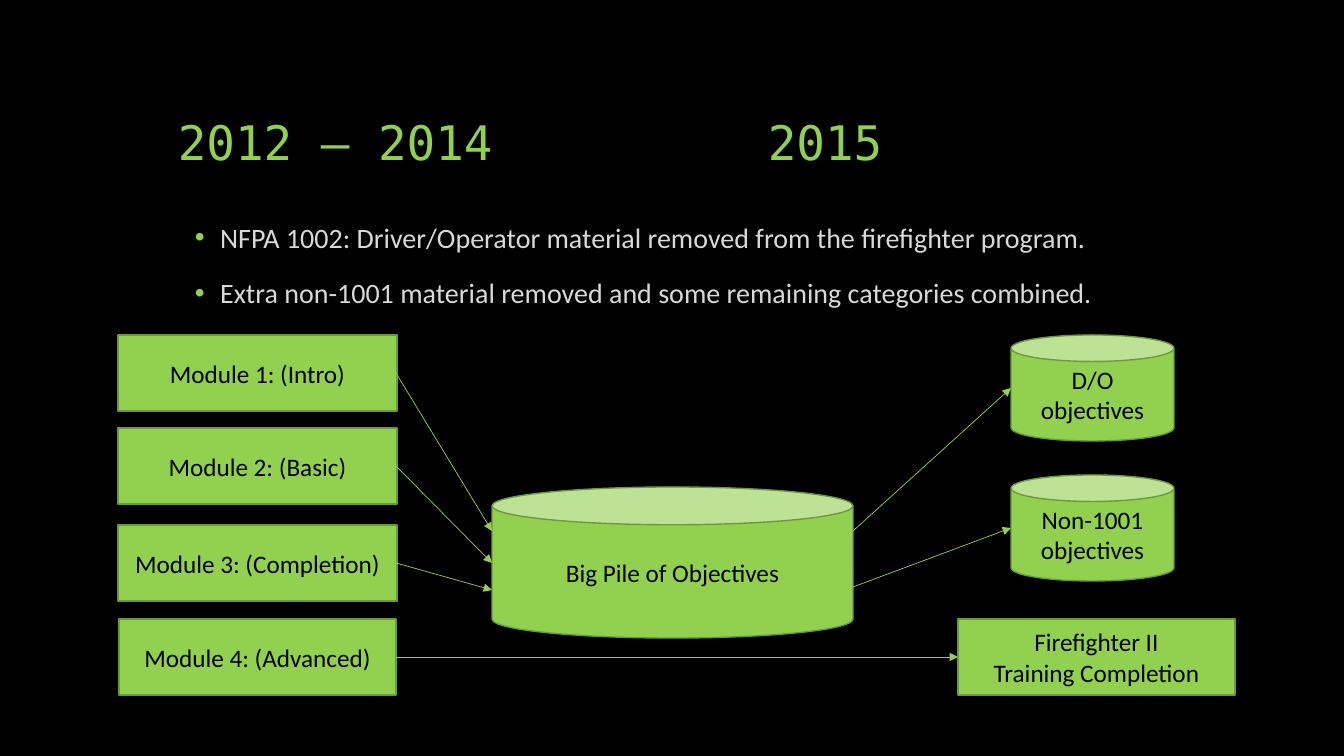
from lxml.etree import SubElement
from pptx import Presentation
from pptx.dml.color import RGBColor
from pptx.enum.shapes import MSO_CONNECTOR as CONNECTOR, MSO_SHAPE as SHAPE
from pptx.enum.text import MSO_ANCHOR as ANCHOR, PP_ALIGN as ALIGN
from pptx.oxml.ns import qn
from pptx.util import Pt

PX = 9071.43  # EMU per px, 100.8 px to the inch
COLORS = {"background": "000000", "green": "92D050", "outline": "6C9A3B",
          "label": "000000", "body": "D9D9D9"}


def emu(*lengths):
    return [round(length * PX) for length in lengths]


def add_run(paragraph, text, size, color, font="Calibri"):
    run = paragraph.add_run()
    run.text = text
    run.font.size = Pt(size)
    run.font.name = font
    run.font.color.rgb = RGBColor.from_string(COLORS[color])


presentation = Presentation()
presentation.slide_width, presentation.slide_height = emu(1344, 756)
slide = presentation.slides.add_slide(presentation.slide_layouts[6])
slide.background.fill.solid()
slide.background.fill.fore_color.rgb = RGBColor.from_string(COLORS["background"])

# Title: the second year sits on a tab stop
title = slide.shapes.add_textbox(*emu(168, 50, 1008, 126)).text_frame
title.word_wrap = True
title.vertical_anchor = ANCHOR.BOTTOM
paragraph = title.paragraphs[0]
paragraph.line_spacing = 0.9
tab_list = SubElement(paragraph._p.get_or_add_pPr(), qn("a:tabLst"))
SubElement(tab_list, qn("a:tab"), pos=str(emu(590)[0]), algn="l")
add_run(paragraph, "2012 – 2014\t2015", 34, "green", "DejaVu Sans Mono")

# Bulleted changes
bullets = [
    "NFPA 1002: Driver/Operator material removed from the firefighter program.",
    "Extra non-1001 material removed and some remaining categories combined.",
]
body = slide.shapes.add_textbox(*emu(185, 219, 1008, 176)).text_frame
body.word_wrap = True
for index, text in enumerate(bullets):
    paragraph = body.add_paragraph() if index else body.paragraphs[0]
    paragraph.line_spacing = 0.9
    paragraph.space_before = Pt(18)
    properties = paragraph._p.get_or_add_pPr()
    properties.set("marL", str(Pt(18)))
    properties.set("indent", str(-Pt(18)))
    bullet_color = SubElement(properties, qn("a:buClr"))
    SubElement(bullet_color, qn("a:srgbClr"), val=COLORS["green"])
    SubElement(properties, qn("a:buFont"), typeface="Arial")
    SubElement(properties, qn("a:buChar"), char="•")
    add_run(paragraph, text, 20, "body")

# Modules, objective stores and the completion box
nodes = [
    (SHAPE.RECTANGLE, (118, 335, 279, 76), ["Module 1: (Intro)"]),
    (SHAPE.RECTANGLE, (118, 428, 279, 76), ["Module 2: (Basic)"]),
    (SHAPE.RECTANGLE, (118, 525, 279, 76), ["Module 3: (Completion)"]),
    (SHAPE.RECTANGLE, (119, 619, 277, 76), ["Module 4: (Advanced)"]),
    (SHAPE.CAN, (492, 487, 361, 151), ["Big Pile of Objectives"]),
    (SHAPE.CAN, (1011, 335, 163, 106), ["D/O objectives"]),
    (SHAPE.CAN, (1011, 475, 163, 106), ["Non-1001 objectives"]),
    (SHAPE.RECTANGLE, (958, 619, 277, 76), ["Firefighter II", "Training Completion"]),
]
for kind, box, lines in nodes:
    shape = slide.shapes.add_shape(kind, *emu(*box))
    shape.shadow.inherit = False
    shape.fill.solid()
    shape.fill.fore_color.rgb = RGBColor.from_string(COLORS["green"])
    shape.line.color.rgb = RGBColor.from_string(COLORS["outline"])
    shape.line.width = Pt(1)
    frame = shape.text_frame
    frame.word_wrap = True
    frame.vertical_anchor = ANCHOR.MIDDLE
    for index, text in enumerate(lines):
        paragraph = frame.add_paragraph() if index else frame.paragraphs[0]
        paragraph.alignment = ALIGN.CENTER
        add_run(paragraph, text, 18, "label")

# Arrows: start x, start y, end x, end y
arrows = [
    (396, 373, 492, 531),
    (396, 466, 492, 563),
    (396, 563, 492, 590),
    (396, 657, 958, 657),
    (853, 531, 1011, 388),
    (853, 587, 1011, 528),
]
for ends in arrows:
    arrow = slide.shapes.add_connector(CONNECTOR.STRAIGHT, *emu(*ends))
    arrow.line.color.rgb = RGBColor.from_string(COLORS["green"])
    arrow.line.width = Pt(0.5)
    SubElement(arrow.line._get_or_add_ln(), qn("a:tailEnd"), type="triangle")
    SubElement(arrow._element.spPr, qn("a:effectLst"))

presentation.save("out.pptx")
